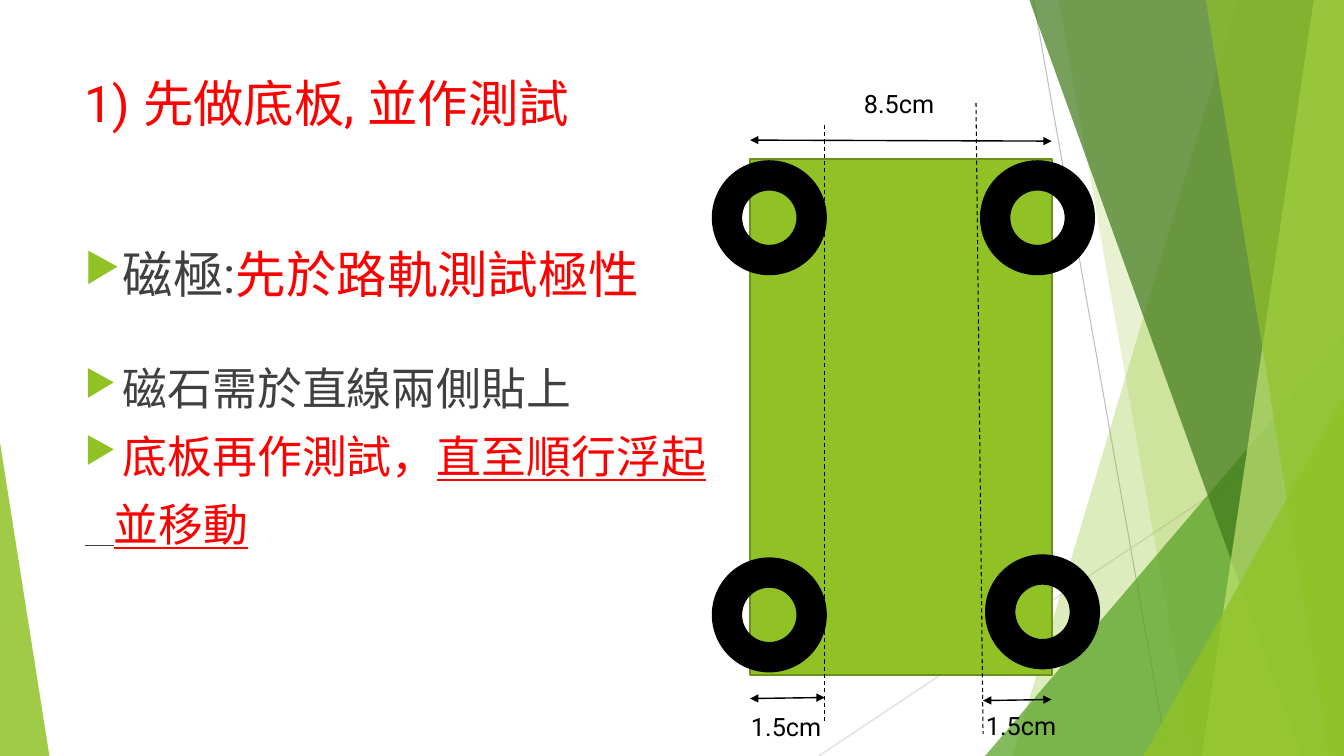
"""Build the slide on making and testing the base board of a model."""
from dataclasses import dataclass

from lxml import etree
from pptx import Presentation
from pptx.dml.color import RGBColor
from pptx.enum.dml import MSO_LINE
from pptx.enum.shapes import MSO_CONNECTOR, MSO_SHAPE
from pptx.enum.text import MSO_ANCHOR, MSO_AUTO_SIZE, PP_ALIGN
from pptx.oxml.ns import qn
from pptx.util import Inches, Pt

RECT, DONUT = MSO_SHAPE.RECTANGLE, MSO_SHAPE.DONUT
WEDGE = MSO_SHAPE.ISOSCELES_TRIANGLE
STRAIGHT, DASH = MSO_CONNECTOR.STRAIGHT, MSO_LINE.DASH
TOP, LEFT, FIXED = MSO_ANCHOR.TOP, PP_ALIGN.LEFT, MSO_AUTO_SIZE.NONE


@dataclass(frozen=True)
class Theme:
    """Hold the font, colours and type sizes."""
    font: str = "Roboto"
    green: str = "90C226"
    leaf: str = "54A021"
    dark: str = "3F7819"
    lime: str = "C0E474"
    edge: str = "6B901C"
    gray: str = "404040"
    red: str = "FF0000"
    black: str = "000000"
    big: int = 36
    mid: int = 32
    small: int = 18
    pad: int = 21


LOOK = Theme()
HIGH, WIDE = 7.5, 13.33

RAYS = [((10.25, 0), (11.58, HIGH), "BFBFBF"),
        ((WIDE, 4.03), (8.12, HIGH), "D9D9D9")]
BANDS = [(12.28, 10.04, LOOK.green, 30), (10.5, 11.83, LOOK.green, 20),
         (10.21, 12.91, LOOK.dark, 70), (13.03, 11.92, LOOK.lime, 70),
         (11.96, 13.18, LOOK.green, 65)]
WEDGES = [((9.77, 3.33, 3.56, 4.17), 1, LOOK.leaf, 72),
          ((11.34, 3.93, 1.99, 3.57), 1, LOOK.green, 80),
          ((0, 4.39, 0.49, 3.11), 0, LOOK.green, 85)]

TITLE = [{"runs": [("1) 先做底板, 並作測試", LOOK.red, LOOK.big, False)]}]
STEPS = [
    {"mark": True, "gap": 10,
     "runs": [("磁極:", LOOK.gray, LOOK.big, False),
              ("先於路軌測試極性", LOOK.red, LOOK.big, False)]},
    {"mark": True, "gap": 41,
     "runs": [("磁石需於直線兩側貼上", LOOK.gray, LOOK.mid, False)]},
    {"mark": True, "gap": 10,
     "runs": [("底板再作測試，", LOOK.red, LOOK.mid, False),
              ("直至順行浮起", LOOK.red, LOOK.mid, True)]},
    {"gap": 10,
     "runs": [("　", LOOK.gray, LOOK.pad, True),
              ("並移動", LOOK.red, LOOK.mid, True)]},
]

BOARD = (7.44, 1.58, 2.99, 5.12)
GUIDES = [((8.18, 1.24), (8.18, 7.15)), ((9.68, 1.02), (9.75, 7.28))]
SPANS = [((7.44, 6.93), (8.18, 6.92)), ((7.44, 1.39), (10.43, 1.4)),
         ((9.75, 6.95), (10.43, 6.94))]
SIZES = [("8.5cm", 8.47, 0.83), ("1.5cm", 7.35, 7.01), ("1.5cm", 9.68, 7)]
WHEELS = [(7.07, 1.6), (9.73, 1.6), (7.07, 5.54), (9.78, 5.51)]
WHEEL = 1.12


def tint(text):
    """Turn hex text into a colour."""
    return RGBColor.from_string(text)


def paint(shape, fill, alpha=100, edge=None):
    """Set the fill, see-through level and outline of a shape."""
    shape.shadow.inherit = False
    shape.fill.solid()
    shape.fill.fore_color.rgb = tint(fill)
    if alpha < 100:
        node = shape.fill._xPr.find(".//" + qn("a:srgbClr"))
        etree.SubElement(node, qn("a:alpha"), val=str(alpha * 1000))
    if edge:
        shape.line.color.rgb = tint(edge)
        shape.line.width = Pt(1.5)
    else:
        shape.line.fill.background()


def form(shapes, kind, box):
    """Add a preset shape at a box in inches."""
    return shapes.add_shape(kind, *map(Inches, box))


def band(shapes, top, foot, fill, alpha):
    """Add a band from two slanted points to the right slide edge."""
    pen = shapes.build_freeform(Inches(top), 0, scale=1.0)
    ends = [(WIDE, 0), (WIDE, HIGH), (foot, HIGH)]
    pen.add_line_segments([(Inches(x), Inches(y)) for x, y in ends])
    paint(pen.convert_to_shape(), fill, alpha)


def rule(shapes, start, end, color, width=0.75, dash=False, heads=False):
    """Add a straight line, dashed or with two arrowheads on request."""
    line = shapes.add_connector(STRAIGHT, *map(Inches, start + end))
    line.line.color.rgb = tint(color)
    line.line.width = Pt(width)
    if dash:
        line.line.dash_style = DASH
    if heads:
        node = line.line._get_or_add_ln()
        for name in ("a:headEnd", "a:tailEnd"):
            etree.SubElement(node, qn(name), type="triangle")
    etree.SubElement(line._element.spPr, qn("a:effectLst"))


def bullet(para):
    """Give a paragraph a green arrow bullet and a hanging indent."""
    props = para._p.get_or_add_pPr()
    props.set("marL", str(Inches(0.38)))
    props.set("indent", str(-Inches(0.38)))
    color = etree.SubElement(props, qn("a:buClr"))
    etree.SubElement(color, qn("a:srgbClr"), val=LOOK.green)
    etree.SubElement(props, qn("a:buSzPct"), val="80000")
    etree.SubElement(props, qn("a:buChar"), char="▶")


def write(shape, paras, wrap=True):
    """Fill a shape with formatted paragraphs."""
    frame = shape.text_frame
    frame.word_wrap = wrap
    frame.auto_size = FIXED
    frame.vertical_anchor = TOP
    for num, item in enumerate(paras):
        para = frame.add_paragraph() if num else frame.paragraphs[0]
        para.alignment = LEFT
        para.space_before = Pt(item.get("gap", 0))
        if item.get("mark"):
            bullet(para)
        for text, color, size, under in item["runs"]:
            run = para.add_run()
            run.text = text
            run.font.name = LOOK.font
            run.font.size = Pt(size)
            run.font.color.rgb = tint(color)
            run.font.underline = under


def scene(shapes):
    """Draw the green bands around the slide."""
    for start, end, color in RAYS:
        rule(shapes, start, end, color)
    for item in BANDS[:2]:
        band(shapes, *item)
    for num, (box, peak, fill, alpha) in enumerate(WEDGES):
        wedge = form(shapes, WEDGE, box)
        wedge.adjustments[0] = peak
        paint(wedge, fill, alpha)
        if num == 0:
            for item in BANDS[2:]:
                band(shapes, *item)


def model(shapes):
    """Draw the board with its guides, sizes and wheels."""
    paint(form(shapes, RECT, BOARD), LOOK.green, edge=LOOK.edge)
    for start, end in GUIDES:
        rule(shapes, start, end, LOOK.black, dash=True)
    for start, end in SPANS:
        rule(shapes, start, end, LOOK.black, width=1, heads=True)
    for text, left, top in SIZES:
        box = shapes.add_textbox(*map(Inches, (left, top, 1.12, 0.4)))
        write(box, [{"runs": [(text, LOOK.black, LOOK.small, False)]}])
    for left, top in WHEELS:
        wheel = form(shapes, DONUT, (left, top, WHEEL, WHEEL))
        paint(wheel, LOOK.black, edge=LOOK.black)


def main():
    """Build and save the slide."""
    deck = Presentation()
    deck.slide_width, deck.slide_height = Inches(WIDE), Inches(HIGH)
    slide = deck.slides.add_slide(deck.slide_layouts[5])
    shapes = slide.shapes
    scene(shapes)
    title = shapes.title
    title.left, title.top = Inches(0.74), Inches(0.67)
    title.width, title.height = Inches(9.4), Inches(1.44)
    write(title, TITLE)
    body = shapes.add_textbox(*map(Inches, (0.74, 2.36, 9.4, 4.24)))
    write(body, STEPS)
    model(shapes)
    deck.save("out.pptx")


if __name__ == "__main__":
    main()
